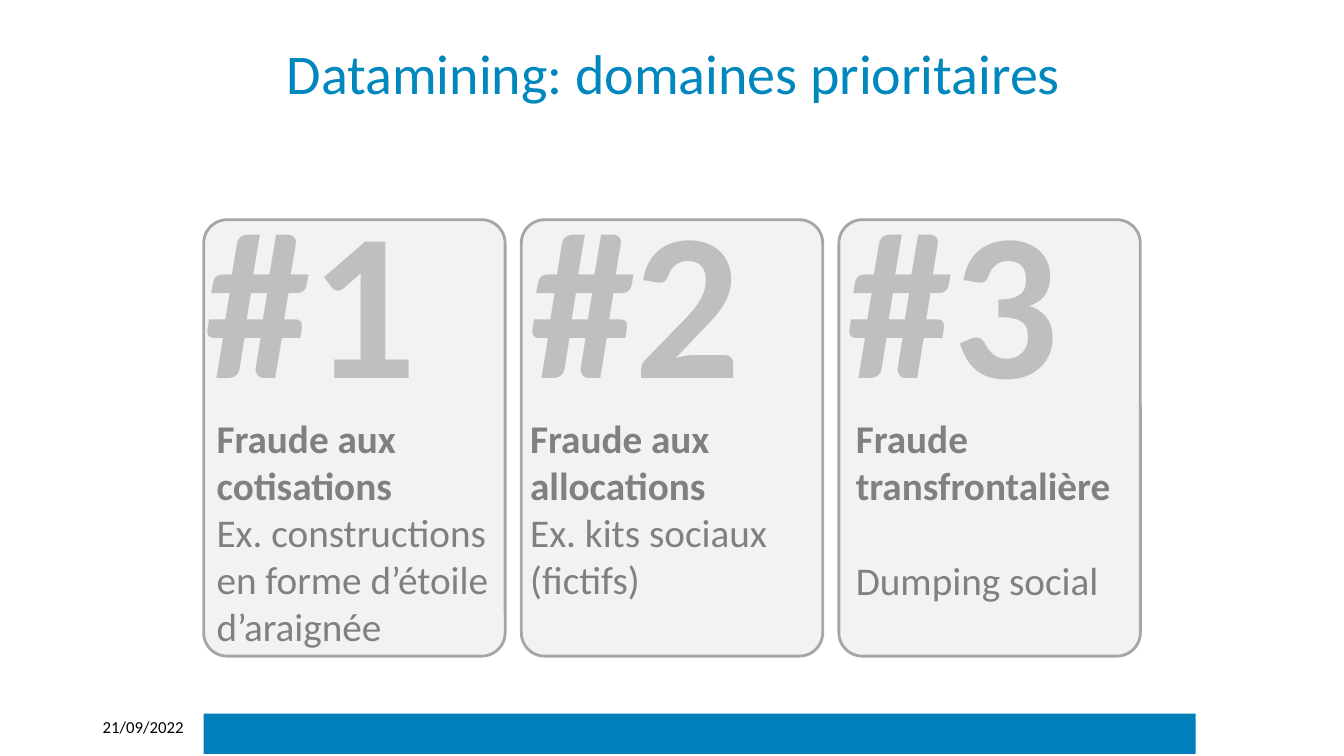
from pptx import Presentation
from pptx.dml.color import RGBColor
from pptx.enum.shapes import MSO_SHAPE
from pptx.enum.text import MSO_ANCHOR, MSO_AUTO_SIZE, PP_ALIGN
from pptx.util import Inches, Pt

FONT = "Calibri"
CARD_LEFT, CARD_STEP = 2.02, 3.15

# Per domain: number left, text left, text width, wrap, bold lines, plain lines, gap in points
DOMAINS = [
    (1.94, 2.05, 2.95, True, ["Fraude aux", "cotisations"],
     ["Ex. constructions en forme d’étoile d’araignée"], 0),
    (5.16, 5.16, 2.58, False, ["Fraude aux", "allocations"],
     ["Ex. kits sociaux", "(fictifs)"], 0),
    (8.31, 8.39, 2.92, True, ["Fraude transfrontalière"],
     ["Dumping social"], 34),
]


def color(hex_string):
    return RGBColor.from_string(hex_string)


def write(paragraph, text, size, fill, bold=False, align=PP_ALIGN.LEFT, before=0):
    paragraph.alignment = align
    if before:
        paragraph.space_before = Pt(before)
    run = paragraph.add_run()
    run.text = text
    run.font.name = FONT
    run.font.size = Pt(size)
    run.font.bold = bold
    run.font.color.rgb = color(fill)


def add_panel(slide, kind, box, fill, line=None):
    panel = slide.shapes.add_shape(kind, *map(Inches, box))
    panel.shadow.inherit = False
    panel.fill.solid()
    panel.fill.fore_color.rgb = color(fill)
    if line:
        panel.line.color.rgb = color(line)
        panel.line.width = Pt(2)
    else:
        panel.line.fill.background()
    return panel


def add_text(slide, box, lines, wrap=True, grow=True):
    """Each line is a pair: its text and its format."""
    frame = slide.shapes.add_textbox(*map(Inches, box)).text_frame
    frame.word_wrap = wrap
    frame.auto_size = MSO_AUTO_SIZE.SHAPE_TO_FIT_TEXT if grow else MSO_AUTO_SIZE.NONE
    for index, (text, style) in enumerate(lines):
        paragraph = frame.add_paragraph() if index else frame.paragraphs[0]
        write(paragraph, text, **style)


def add_title(slide, text):
    title = slide.shapes.title
    title.left, title.top = Inches(0.68), Inches(0.21)
    title.width, title.height = Inches(12), Inches(1.01)
    title.text_frame.vertical_anchor = MSO_ANCHOR.MIDDLE
    write(title.text_frame.paragraphs[0], text, 40, "0087BE", align=PP_ALIGN.CENTER)


def add_domain(slide, index, domain):
    number_left, text_left, text_width, wrap, headings, examples, gap = domain
    card = add_panel(slide, MSO_SHAPE.ROUNDED_RECTANGLE,
                     (CARD_LEFT + index * CARD_STEP, 2.18, 2.99, 4.33), "F2F2F2", "A6A6A6")
    card.adjustments[0] = 0.078
    add_text(slide, (number_left, 1.62, 2.32, 2.63),
             [(f"#{index + 1}", dict(size=150, fill="BFBFBF", bold=True))], wrap=False)
    base = dict(size=28, fill="808080")
    lines = [(text, dict(base, bold=True)) for text in headings]
    lines += [(text, dict(base, before=gap)) for text in examples]
    height = 2.46 if index == 0 else 1.99
    add_text(slide, (text_left, 4.06, text_width, height), lines, wrap=wrap)


def main():
    prs = Presentation()
    prs.slide_width, prs.slide_height = Inches(13.33), Inches(7.5)
    slide = prs.slides.add_slide(prs.slide_layouts[5])

    # Title and footer band
    add_panel(slide, MSO_SHAPE.RECTANGLE, (2.02, 7.08, 9.84, 0.4), "0080BB")
    add_title(slide, "Datamining: domaines prioritaires")

    # Priority domains
    for index, domain in enumerate(DOMAINS):
        add_domain(slide, index, domain)

    # Date
    add_text(slide, (0.92, 7.06, 1.26, 0.4),
             [("21/09/2022", dict(size=12, fill="000000"))], grow=False)

    prs.save("out.pptx")


if __name__ == "__main__":
    main()
